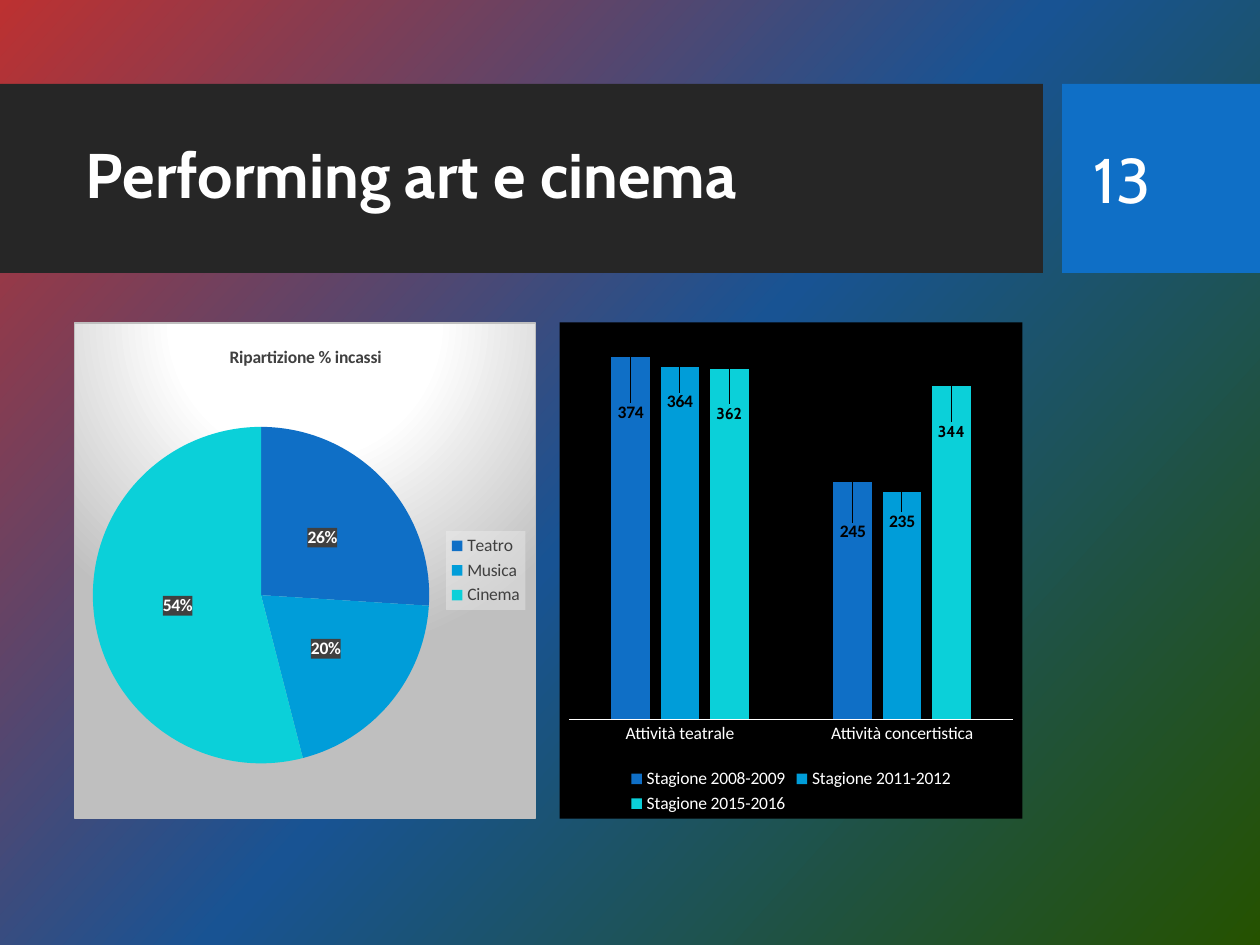
from lxml import etree
from pptx import Presentation
from pptx.chart.data import CategoryChartData
from pptx.dml.color import RGBColor
from pptx.enum.chart import (
    XL_CHART_TYPE as ChartType,
    XL_LABEL_POSITION as LabelPosition,
    XL_LEGEND_POSITION as LegendPosition,
    XL_TICK_MARK as TickMark,
)
from pptx.enum.shapes import MSO_SHAPE as Shape
from pptx.enum.text import MSO_ANCHOR as Anchor
from pptx.oxml import parse_xml
from pptx.oxml.ns import nsdecls, qn
from pptx.util import Pt

WHITE, BLACK, GREY = "FFFFFF", "000000", "BFBFBF"
ACCENTS = ["0F6FC6", "009DD9", "0BD0D9"]
CHART_TOP, CHART_HEIGHT = 184.25, 283.5


def color(value):
    return RGBColor.from_string(value)


def style_font(font, size=10, fill=WHITE, name="Calibri", bold=False):
    font.size, font.name, font.bold = Pt(size), name, bold
    font.color.rgb = color(fill)


def paint(fill, value):
    fill.solid()
    fill.fore_color.rgb = color(value)


def solid_xml(value, alpha=100):
    return (f'<a:solidFill><a:srgbClr val="{value}">'
            f'<a:alpha val="{alpha * 1000}"/></a:srgbClr></a:solidFill>')


def gradient_xml(stops, direction):
    marks = "".join(f'<a:gs pos="{at * 1000}"><a:srgbClr val="{value}"/></a:gs>'
                    for at, value in stops)
    return (f'<a:gradFill {nsdecls("a")} rotWithShape="1">'
            f'<a:gsLst>{marks}</a:gsLst>{direction}</a:gradFill>')


def chart_format(content):
    return parse_xml(f'<c:spPr {nsdecls("c", "a")}>{content}</c:spPr>')


def set_layout(parent, after=None, inner=False, **places):
    """Give a chart part a manual layout, in fractions of the chart."""
    for old in parent.findall(qn("c:layout")):
        parent.remove(old)
    layout = etree.Element(qn("c:layout"))
    manual = etree.SubElement(layout, qn("c:manualLayout"))
    settings = {"layoutTarget": "inner"} if inner else {}
    if after != "c:idx":
        settings.update(xMode="edge", yMode="edge")
    settings.update(places)
    for key, value in settings.items():
        etree.SubElement(manual, qn(f"c:{key}")).set("val", str(value))
    if after:
        parent.find(qn(after)).addnext(layout)
    else:
        parent.insert(0, layout)


def set_background(page):
    fill = page.background.fill
    fill.solid()
    properties = page.element.find(".//" + qn("p:bgPr"))
    stops = [(0, "BC3131"), (50, "185393"), (100, "255200")]
    gradient = parse_xml(gradient_xml(stops, '<a:lin ang="2520000" scaled="0"/>'))
    properties.replace(properties.find(qn("a:solidFill")), gradient)


def add_band(page, left, width, fill):
    band = page.shapes.add_shape(Shape.RECTANGLE, Pt(left), Pt(48), Pt(width), Pt(108))
    band.shadow.inherit = False
    paint(band.fill, fill)
    band.line.fill.background()


def add_text(page, text, left, width, spacing=1.0, **look):
    box = page.shapes.add_textbox(Pt(left), Pt(59), Pt(width), Pt(85.5))
    frame = box.text_frame
    frame.word_wrap = True
    frame.vertical_anchor = Anchor.MIDDLE
    para = frame.paragraphs[0]
    para.line_spacing = spacing
    span = para.add_run()
    span.text = text
    style_font(span.font, **look)


def add_chart(page, kind, left, categories, series, background, legend_at, legend_color):
    data = CategoryChartData()
    data.categories = categories
    for name, values in series:
        data.add_series(name, values)
    chart = page.shapes.add_chart(kind, Pt(left), Pt(CHART_TOP), Pt(264.5),
                                  Pt(CHART_HEIGHT), data).chart
    style_font(chart.font, name="Cabin")
    chart.element.find(qn("c:chart")).addnext(chart_format(background))
    chart.has_legend = True
    chart.legend.position = legend_at
    chart.legend.include_in_layout = False
    style_font(chart.legend.font, fill=legend_color)
    return chart


def plot_area(chart):
    return chart.element.find(".//" + qn("c:plotArea"))


def add_income_pie(page):
    glow = gradient_xml(
        [(0, WHITE), (39, WHITE), (100, GREY)],
        '<a:path path="circle"><a:fillToRect l="50000" t="-80000" r="50000" b="180000"/></a:path>')
    border = f'<a:ln w="9525">{solid_xml(GREY)}</a:ln>'
    chart = add_chart(page, ChartType.PIE, 42, ["Teatro", "Musica", "Cinema"],
                      [("Series 1", (26, 20, 54))], glow + border,
                      LegendPosition.RIGHT, "404040")
    set_layout(plot_area(chart), inner=True, x=0.04, y=0.21, w=0.73, h=0.68)

    # Title
    chart.has_title = True
    para = chart.chart_title.text_frame.paragraphs[0]
    span = para.add_run()
    span.text = "Ripartizione % incassi"
    style_font(span.font, fill="404040", bold=True)
    chart.chart_title.include_in_layout = False
    set_layout(chart.element.find(".//" + qn("c:title")), after="c:tx", x=0.33, y=0.04)

    # Translucent legend panel
    legend = chart.element.find(".//" + qn("c:legend"))
    legend.find(qn("c:txPr")).addprevious(chart_format(solid_xml("F2F2F2", 39)))

    # Slices and their labels
    plot = chart.plots[0]
    plot.vary_by_categories = True
    for index, fill in enumerate(ACCENTS):
        paint(plot.series[0].points[index].format.fill, fill)
    labels = plot.series[0].data_labels
    labels.show_percentage, labels.show_value = True, False
    labels.number_format, labels.number_format_is_linked = "0%", False
    labels.position = LabelPosition.CENTER
    style_font(labels.font, bold=True)
    group = plot_area(chart).find(".//" + qn("c:dLbls"))
    group.find(qn("c:txPr")).addprevious(chart_format(solid_xml("404040")))


def add_season_columns(page):
    series = [("Stagione 2008-2009", (374, 245)),
              ("Stagione 2011-2012", (364, 235)),
              ("Stagione 2015-2016", (362, 344))]
    chart = add_chart(page, ChartType.COLUMN_CLUSTERED, 319.75,
                      ["Attività teatrale", "Attività concertistica"], series,
                      solid_xml(BLACK) + "<a:ln><a:noFill/></a:ln>",
                      LegendPosition.BOTTOM, WHITE)
    chart.has_title = False
    set_layout(plot_area(chart), inner=True, x=0.02, y=0.02, w=0.96, h=0.78)

    # Axes
    values = chart.value_axis
    values.minimum_scale, values.maximum_scale = 0, 400
    values.has_major_gridlines = False
    values.visible = False
    seasons = chart.category_axis
    seasons.major_tick_mark = TickMark.NONE
    seasons.format.line.width = Pt(0.75)
    seasons.format.line.color.rgb = color(WHITE)
    style_font(seasons.tick_labels.font)

    # Columns, with labels moved down into them
    plot = chart.plots[0]
    plot.vary_by_categories = False
    plot.gap_width, plot.overlap = 219, -27
    looks = [{}, {}, {"size": 9, "name": "Cabin"}]
    drops = [(0.14, 0.13), (0.1, 0.09), (0.12, 0.12)]
    for bars, fill, look, shifts in zip(plot.series, ACCENTS, looks, drops):
        paint(bars.format.fill, fill)
        bars.data_labels.show_value = True
        style_font(bars.data_labels.font, fill=BLACK, bold=True, **look)
        for index, shift in enumerate(shifts):
            label = bars.points[index].data_label
            style_font(label.font, fill=BLACK, bold=True, **look)
            label.position = LabelPosition.OUTSIDE_END
        for entry, shift in zip(bars.data_labels._element.findall(qn("c:dLbl")), shifts):
            set_layout(entry, after="c:idx", x=0, y=shift)


def main():
    deck = Presentation()
    deck.slide_width, deck.slide_height = Pt(720), Pt(540)
    page = deck.slides.add_slide(deck.slide_layouts[6])
    set_background(page)

    # Title band and page number
    add_band(page, 0, 596, "262626")
    add_band(page, 607, 113, ACCENTS[0])
    add_text(page, "Performing art e cinema", 42, 542, spacing=0.9,
             size=36, name="Cabin", bold=True)
    add_text(page, "13", 618, 91.5, size=36, name="Cabin")

    # Charts
    add_income_pie(page)
    add_season_columns(page)
    deck.save("out.pptx")


if __name__ == "__main__":
    main()
